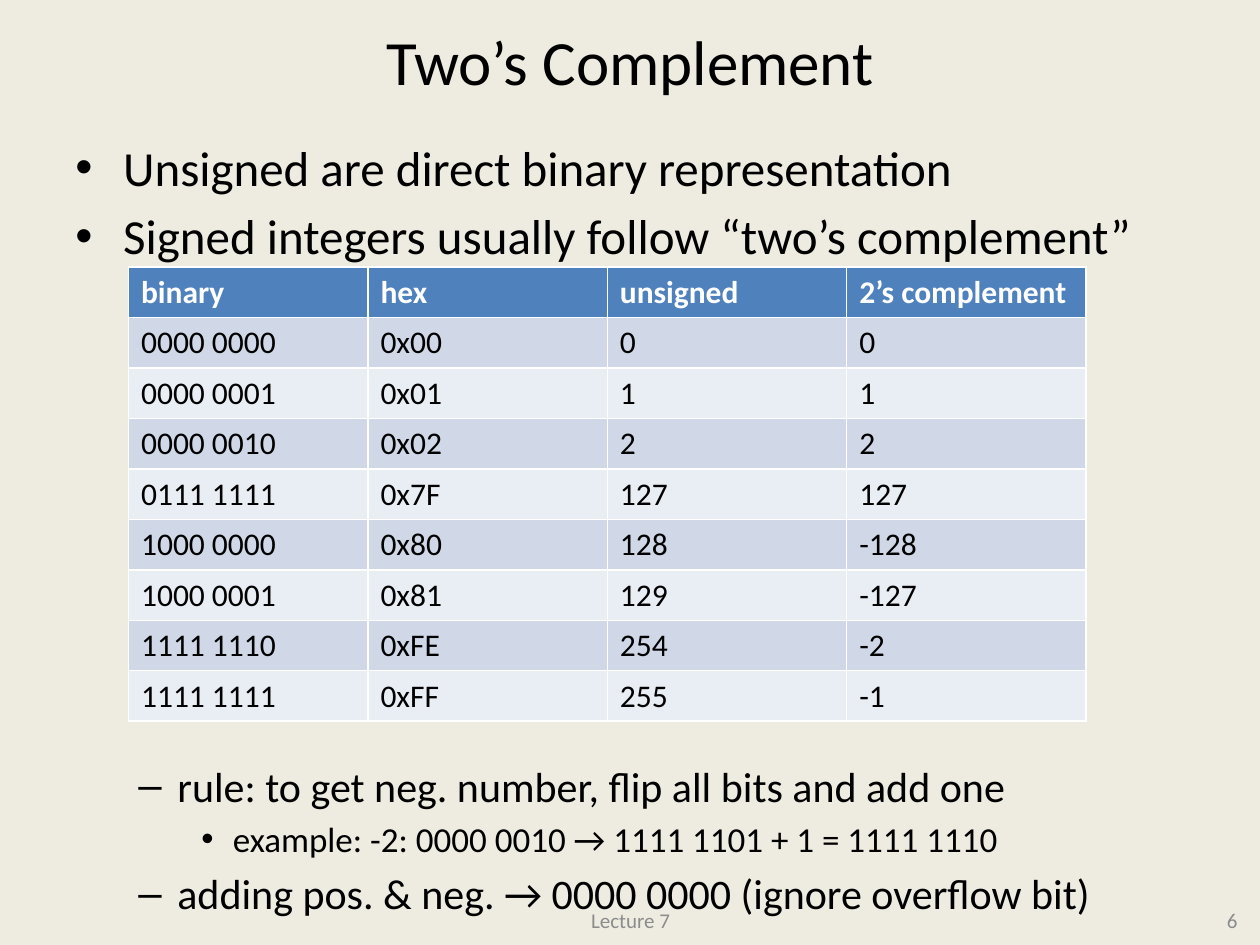
"""Build a slide that explains two's complement."""
from lxml.etree import SubElement
from pptx import Presentation
from pptx.dml.color import RGBColor
from pptx.enum.text import MSO_ANCHOR, PP_ALIGN
from pptx.oxml.ns import qn
from pptx.util import Inches, Pt

BLACK = RGBColor(0x00, 0x00, 0x00)
WHITE = RGBColor(0xFF, 0xFF, 0xFF)
GREY = RGBColor(0x8C, 0x8C, 0x8C)
CREAM = RGBColor(0xEE, 0xEC, 0xE1)
BLUE = RGBColor(0x4F, 0x81, 0xBD)
BANDS = RGBColor(0xE9, 0xED, 0xF4), RGBColor(0xD0, 0xD8, 0xE8)

LEVELS = [("•", 0.38, 0.38, 28), ("–", 0.81, 0.31, 24), ("•", 1.25, 0.25, 20)]
TABLE_GAP = 283

POINTS = [
    (0, "Unsigned are direct binary representation", 0),
    (0, "Signed integers usually follow “two’s complement”", 5.6),
    (1, "rule: to get neg. number, flip all bits and add one", TABLE_GAP),
    (2, "example: -2: 0000 0010 → 1111 1101 + 1 = 1111 1110", 4),
    (1, "adding pos. & neg. → 0000 0000 (ignore overflow bit)", 4.8),
]
ROWS = [
    ("binary", "hex", "unsigned", "2’s complement"),
    ("0000 0000", "0x00", "0", "0"),
    ("0000 0001", "0x01", "1", "1"),
    ("0000 0010", "0x02", "2", "2"),
    ("0111 1111", "0x7F", "127", "127"),
    ("1000 0000", "0x80", "128", "-128"),
    ("1000 0001", "0x81", "129", "-127"),
    ("1111 1110", "0xFE", "254", "-2"),
    ("1111 1111", "0xFF", "255", "-1"),
]


class Deck:
    """Hold the text style and the current slide."""

    def __init__(self, font):
        self.font = font
        self.deck = Presentation()
        self.deck.slide_width = Inches(10)
        self.deck.slide_height = Inches(7.5)
        self.slide = self.deck.slides.add_slide(self.deck.slide_layouts[5])
        fill = self.slide.background.fill
        fill.solid()
        fill.fore_color.rgb = CREAM

    def add_text(self, para, text, size, color=BLACK, bold=False):
        """Add one styled run to a paragraph."""
        run = para.add_run()
        run.text = text
        font = run.font
        font.name, font.size, font.bold = self.font, Pt(size), bold
        font.color.rgb = color

    def title(self, text, left, top, width, height):
        """Place and fill the title."""
        shape = self.slide.shapes.title
        shape.left, shape.top = Inches(left), Inches(top)
        shape.width, shape.height = Inches(width), Inches(height)
        frame = shape.text_frame
        frame.vertical_anchor = MSO_ANCHOR.MIDDLE
        para = frame.paragraphs[0]
        para.alignment = PP_ALIGN.CENTER
        self.add_text(para, text, 36)

    def box(self, left, top, width, height):
        """Add a wrapping text box and return its frame."""
        place = map(Inches, (left, top, width, height))
        frame = self.slide.shapes.add_textbox(*place).text_frame
        frame.word_wrap = True
        return frame

    def points(self, items, *place):
        """Add a list with bullets on several levels."""
        frame = self.box(*place)
        for i, (level, text, space) in enumerate(items):
            mark, left, hang, size = LEVELS[level]
            para = frame.add_paragraph() if i else frame.paragraphs[0]
            para.level = level
            para.space_before = Pt(space)
            self.add_text(para, text, size)
            props = para._p.get_or_add_pPr()
            props.set("marL", str(Inches(left)))
            props.set("indent", str(-Inches(hang)))
            SubElement(props, qn("a:buFont")).set("typeface", "Arial")
            SubElement(props, qn("a:buChar")).set("char", mark)

    def label(self, text, align, *place):
        """Add a small grey footer text."""
        frame = self.box(*place)
        frame.vertical_anchor = MSO_ANCHOR.MIDDLE
        para = frame.paragraphs[0]
        para.alignment = align
        self.add_text(para, text, 12, GREY)

    def table(self, rows, left, top, width, height):
        """Add a table with a header and banded rows."""
        place = map(Inches, (left, top, width, height))
        grid = self.slide.shapes.add_table(len(rows), len(rows[0]), *place).table
        for r, row in enumerate(rows):
            head = r == 0
            for c, text in enumerate(row):
                cell = grid.cell(r, c)
                cell.fill.solid()
                cell.fill.fore_color.rgb = BLUE if head else BANDS[r % 2]
                para = cell.text_frame.paragraphs[0]
                self.add_text(para, text, 18, WHITE if head else BLACK, head)


def main():
    """Build and save the slide."""
    deck = Deck("Calibri")
    deck.title("Two’s Complement", 0.5, 0.08, 9, 0.8)
    deck.points(POINTS, 0.5, 1.04, 9, 6.05)
    deck.label("Lecture 7", PP_ALIGN.CENTER, 3.42, 7.1, 3.17, 0.4)
    deck.label("6", PP_ALIGN.RIGHT, 7.59, 7.1, 2.33, 0.4)
    deck.table(ROWS, 1.02, 2.12, 7.6, 3.6)
    deck.deck.save("out.pptx")


if __name__ == "__main__":
    main()
